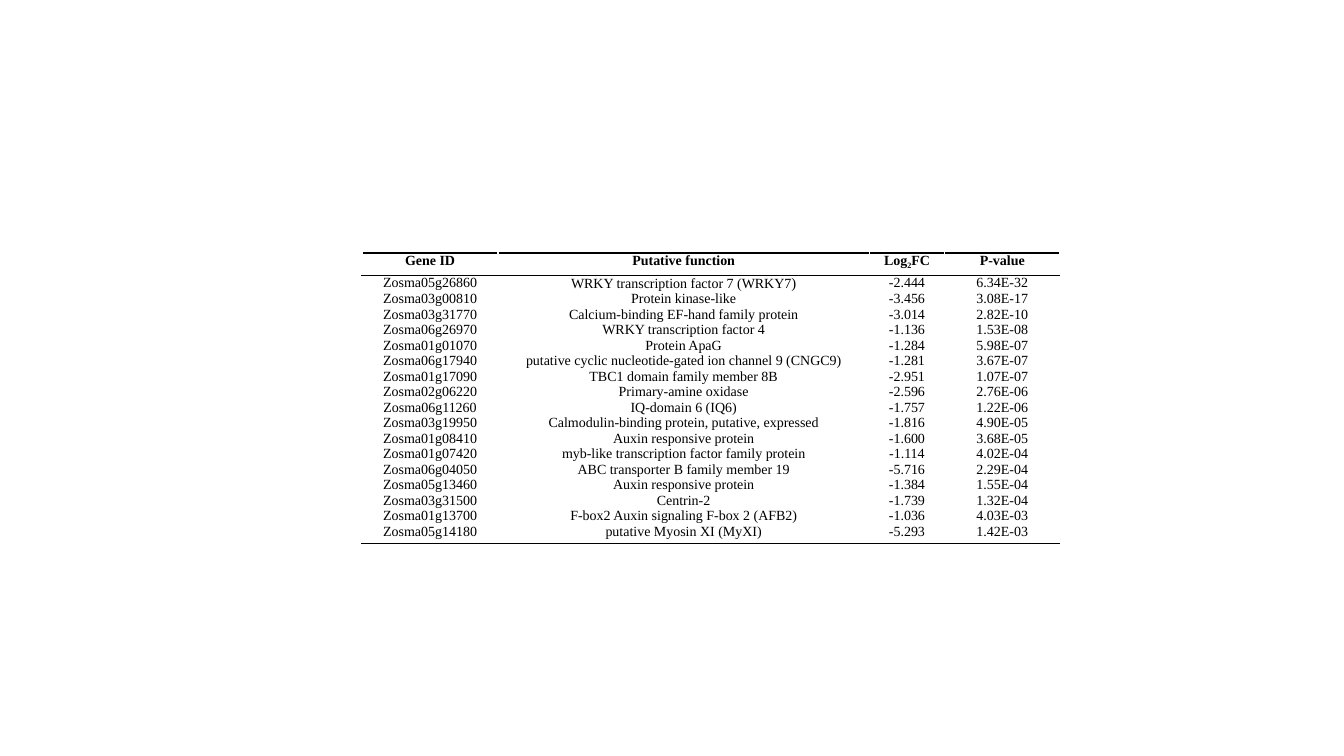
from typing import NamedTuple

from lxml.etree import SubElement
from pptx import Presentation
from pptx.dml.color import RGBColor
from pptx.enum.text import MSO_ANCHOR, PP_ALIGN
from pptx.oxml.ns import qn
from pptx.util import Inches, Pt

BLACK = RGBColor(0x00, 0x00, 0x00)
WHITE = RGBColor(0xFF, 0xFF, 0xFF)
COLUMN_WIDTHS = (1.35, 3.68, 0.75, 1.14)
HEADER_HEIGHT, GENE_HEIGHT, LAST_HEIGHT = 0.22, 0.15, 0.2


class Span(NamedTuple):
    text: str
    size: float = 10
    baseline: int = 0


class Gene(NamedTuple):
    gene_id: str
    function: str | tuple[Span, ...]
    log_fold_change: str
    p_value: str


HEADINGS = (
    "Gene ID",
    "Putative function",
    (Span("Log"), Span("2", baseline=-25000), Span("FC")),
    "P-value",
)
GENES = (
    Gene("Zosma05g26860", (Span("WRKY transcription factor 7 (WRKY7"), Span(")", 10.5)),
         "-2.444", "6.34E-32"),
    Gene("Zosma03g00810", "Protein kinase-like", "-3.456", "3.08E-17"),
    Gene("Zosma03g31770", "Calcium-binding EF-hand family protein", "-3.014", "2.82E-10"),
    Gene("Zosma06g26970", "WRKY transcription factor 4", "-1.136", "1.53E-08"),
    Gene("Zosma01g01070", "Protein ApaG", "-1.284", "5.98E-07"),
    Gene("Zosma06g17940", "putative cyclic nucleotide-gated ion channel 9 (CNGC9)",
         "-1.281", "3.67E-07"),
    Gene("Zosma01g17090", "TBC1 domain family member 8B", "-2.951", "1.07E-07"),
    Gene("Zosma02g06220", "Primary-amine oxidase", "-2.596", "2.76E-06"),
    Gene("Zosma06g11260", "IQ-domain 6 (IQ6)", "-1.757", "1.22E-06"),
    Gene("Zosma03g19950", "Calmodulin-binding protein, putative, expressed",
         "-1.816", "4.90E-05"),
    Gene("Zosma01g08410", "Auxin responsive protein", "-1.600", "3.68E-05"),
    Gene("Zosma01g07420", "myb-like transcription factor family protein",
         "-1.114", "4.02E-04"),
    Gene("Zosma06g04050", "ABC transporter B family member 19", "-5.716", "2.29E-04"),
    Gene("Zosma05g13460", "Auxin responsive protein", "-1.384", "1.55E-04"),
    Gene("Zosma03g31500", "Centrin-2", "-1.739", "1.32E-04"),
    Gene("Zosma01g13700", "F-box2 Auxin signaling F-box 2 (AFB2)", "-1.036", "4.03E-03"),
    Gene("Zosma05g14180", "putative Myosin XI (MyXI)", "-5.293", "1.42E-03"),
)


def set_borders(cell, top: RGBColor, bottom: RGBColor) -> None:
    properties = cell._tc.get_or_add_tcPr()
    for edge, color in {"L": WHITE, "R": WHITE, "T": top, "B": bottom}.items():
        line = SubElement(properties, qn(f"a:ln{edge}"), w=str(Pt(1)))
        fill = SubElement(line, qn("a:solidFill"))
        SubElement(fill, qn("a:srgbClr"), val=str(color))


def write_cell(cell, content: str | tuple[Span, ...], is_header: bool) -> None:
    inset = Inches(0.06 if is_header else 0.07)
    cell_format = {
        "margin_left": inset,
        "margin_right": inset,
        "margin_top": 0,
        "margin_bottom": 0,
        "vertical_anchor": MSO_ANCHOR.TOP,
    }
    for attribute, value in cell_format.items():
        setattr(cell, attribute, value)
    cell.fill.solid()
    cell.fill.fore_color.rgb = WHITE

    paragraph = cell.text_frame.paragraphs[0]
    paragraph.alignment = PP_ALIGN.CENTER
    spans = (Span(content),) if isinstance(content, str) else content
    for span in spans:
        run = paragraph.add_run()
        run.text = span.text
        font_format = {"name": "Times New Roman", "size": Pt(span.size), "bold": is_header}
        for attribute, value in font_format.items():
            setattr(run.font, attribute, value)
        run.font.color.rgb = BLACK
        if span.baseline:
            run._r.get_or_add_rPr().set("baseline", str(span.baseline))


def add_gene_table(slide) -> None:
    rows = (HEADINGS, *GENES)
    last = len(rows) - 1
    heights = (HEADER_HEIGHT, *[GENE_HEIGHT] * (last - 1), LAST_HEIGHT)
    table = slide.shapes.add_table(
        len(rows), len(COLUMN_WIDTHS), Inches(3.59), Inches(2.51),
        Inches(sum(COLUMN_WIDTHS)), Inches(sum(heights)),
    ).table
    table.first_row = table.horz_banding = False
    for column, width in zip(table.columns, COLUMN_WIDTHS):
        column.width = Inches(width)
    for index, (row, height, contents) in enumerate(zip(table.rows, heights, rows)):
        row.height = Inches(height)
        top = BLACK if index in (0, 1) else WHITE
        bottom = BLACK if index in (0, last) else WHITE
        for cell, content in zip(row.cells, contents):
            set_borders(cell, top, bottom)
            write_cell(cell, content, is_header=index == 0)


def main() -> None:
    presentation = Presentation()
    presentation.slide_width = Inches(13.33)
    presentation.slide_height = Inches(7.5)
    blank_layout = presentation.slide_layouts[6]
    add_gene_table(presentation.slides.add_slide(blank_layout))
    presentation.save("out.pptx")


if __name__ == "__main__":
    main()
